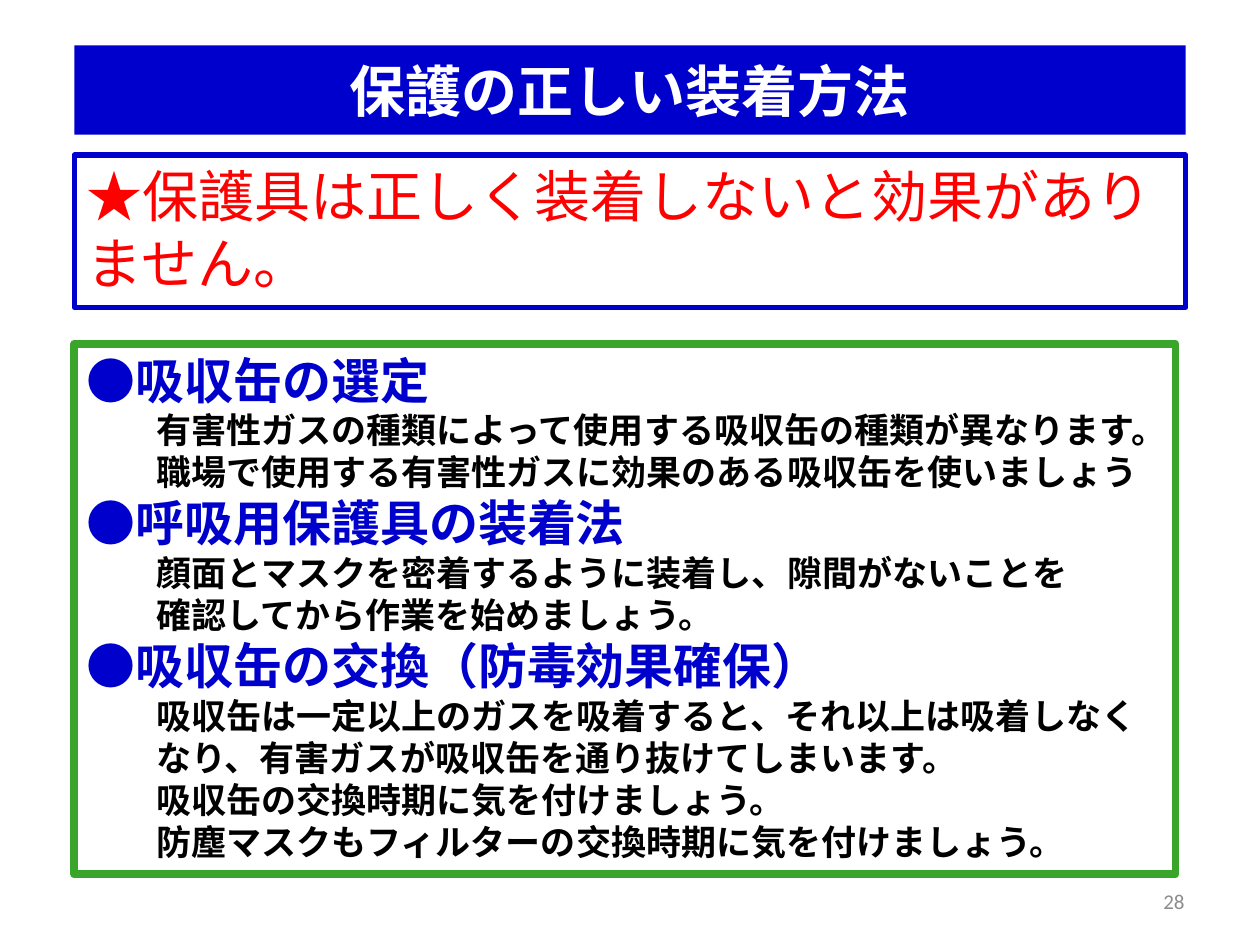
from pptx import Presentation, util as u
from pptx.dml.color import RGBColor
from pptx.enum import shapes, text
from pptx.oxml.ns import qn
from lxml import etree

BLUE = "0000CC"
GOTHIC = "Noto Sans CJK JP"
TOPICS = [
    ("●吸収缶の選定", [
        "有害性ガスの種類によって使用する吸収缶の種類が異なります。",
        "職場で使用する有害性ガスに効果のある吸収缶を使いましょう"]),
    ("●呼吸用保護具の装着法", [
        "顔面とマスクを密着するように装着し、隙間がないことを",
        "確認してから作業を始めましょう。"]),
    ("●吸収缶の交換（防毒効果確保）", [
        "吸収缶は一定以上のガスを吸着すると、それ以上は吸着しなく",
        "なり、有害ガスが吸収缶を通り抜けてしまいます。",
        "吸収缶の交換時期に気を付けましょう。",
        "防塵マスクもフィルターの交換時期に気を付けましょう。"]),
]


def tint(code):
    """Turn a hex string into a colour."""
    return RGBColor.from_string(code)


def panel(slide, box, fill=None, line=None, width=0):
    """Add a rectangle and return its text frame."""
    rect = slide.shapes.add_shape(
        shapes.MSO_SHAPE.RECTANGLE, *map(u.Inches, box))
    rect.shadow.inherit = False
    if fill:
        rect.fill.solid()
        rect.fill.fore_color.rgb = tint(fill)
    else:
        rect.fill.background()
    if line:
        rect.line.color.rgb = tint(line)
        rect.line.width = u.Pt(width)
    else:
        rect.line.fill.background()
    frame = rect.text_frame
    frame.word_wrap = True
    frame.vertical_anchor = text.MSO_ANCHOR.TOP
    return frame


def write(para, words, size, color, bold=False, font=GOTHIC,
          align=text.PP_ALIGN.LEFT, indent=0):
    """Add one run to a paragraph and set its look."""
    para.alignment = align
    para.line_spacing = u.Pt(size * 1.2)
    if indent:
        props = para._p.get_or_add_pPr()
        props.set("marL", str(u.Inches(indent)))
        props.set("indent", "0")
    run = para.add_run()
    run.text = words
    run.font.size = u.Pt(size)
    run.font.bold = bold
    run.font.name = font
    run.font.color.rgb = tint(color)
    east = etree.SubElement(run._r.get_or_add_rPr(), qn("a:ea"))
    east.set("typeface", font)


def title(slide, box):
    """Place the title bar."""
    frame = panel(slide, box, fill=BLUE)
    frame.vertical_anchor = text.MSO_ANCHOR.MIDDLE
    write(frame.paragraphs[0], "保護の正しい装着方法", 32, "FFFFFF", True,
          align=text.PP_ALIGN.CENTER)


def notice(slide, box):
    """Place the framed warning."""
    frame = panel(slide, box, line=BLUE, width=3)
    write(frame.paragraphs[0],
          "★保護具は正しく装着しないと効果がありません。", 32, "FF0000")


def guide(slide, box):
    """Place the framed topics with their advice."""
    frame = panel(slide, box, line="3AA52B", width=4.5)
    para = frame.paragraphs[0]
    for index, (head, lines) in enumerate(TOPICS):
        if index:
            para = frame.add_paragraph()
        write(para, head, 28, BLUE, True)
        for words in lines:
            write(frame.add_paragraph(), words, 20, "000000", True,
                  indent=0.55)


def number(slide, box):
    """Place the page number."""
    frame = slide.shapes.add_textbox(*map(u.Inches, box)).text_frame
    frame.word_wrap = True
    frame.vertical_anchor = text.MSO_ANCHOR.MIDDLE
    write(frame.paragraphs[0], "28", 12, "8C8C8C", font="Calibri",
          align=text.PP_ALIGN.RIGHT)


def main():
    """Build and save the slide."""
    deck = Presentation()
    deck.slide_width, deck.slide_height = u.Inches(10), u.Inches(7.5)
    slide = deck.slides.add_slide(deck.slide_layouts[6])
    title(slide, (0.59, 0.36, 8.82, 0.71))
    notice(slide, (0.59, 1.23, 8.82, 1.21))
    guide(slide, (0.59, 2.73, 8.74, 4.21))
    number(slide, (7.17, 6.95, 2.33, 0.4))
    deck.save("out.pptx")


if __name__ == "__main__":
    main()
